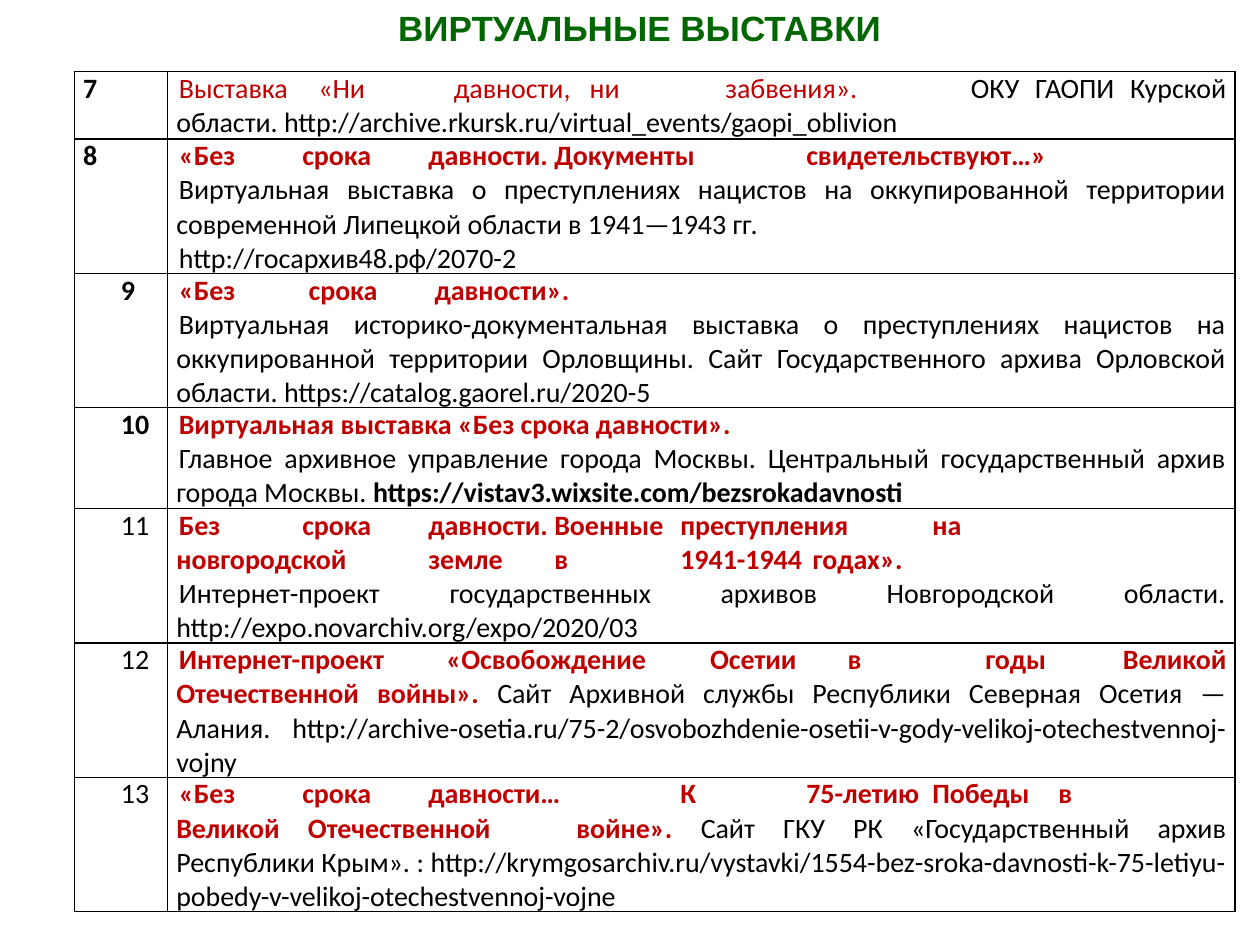
from lxml import etree
from pptx import Presentation
from pptx.dml.color import RGBColor
from pptx.enum.text import MSO_ANCHOR, PP_ALIGN
from pptx.oxml.ns import qn
from pptx.util import Pt

CENTER, JUSTIFY = PP_ALIGN.CENTER, PP_ALIGN.JUSTIFY
TOP = MSO_ANCHOR.TOP
COLORS = {"title": "006600", "heading": "C00000", "body": "000000", "border": "000000"}

TITLE = "ВИРТУАЛЬНЫЕ ВЫСТАВКИ"

# Run styles: colour and weight
HEADING = {"color": "heading", "bold": True}
LIGHT_HEADING = {"color": "heading"}
BODY = {"color": "body"}
BOLD = {"color": "body", "bold": True}

# Number, its style, its first-line indent, lines of text, paragraphs of (text, style) runs
EXHIBITIONS = [
    ("7", BOLD, 0, 2, [
        [("Выставка\t «Ни\t давности,\t ни\t забвения».", LIGHT_HEADING),
         ("\tОКУ ГАОПИ Курской области. "
          "http://archive.rkursk.ru/virtual_events/gaopi_oblivion", BODY)],
    ]),
    ("8", BOLD, 0, 4, [
        [("«Без\tсрока\tдавности.\tДокументы\tсвидетельствуют…»", HEADING)],
        [("Виртуальная выставка о преступлениях нацистов на оккупированной "
          "территории современной Липецкой области в 1941—1943 гг.", BODY)],
        [("http://госархив48.рф/2070-2", BODY)],
    ]),
    ("9", BOLD, 21.6, 4, [
        [("«Без\t срока\t давности».", HEADING)],
        [("Виртуальная историко-документальная выставка о преступлениях нацистов на "
          "оккупированной территории Орловщины. Сайт Государственного архива "
          "Орловской области. https://catalog.gaorel.ru/2020-5", BODY)],
    ]),
    ("10", BOLD, 21.6, 3, [
        [("Виртуальная выставка «Без срока давности».", HEADING)],
        [("Главное архивное управление города Москвы. Центральный государственный "
          "архив города Москвы. ", BODY),
         ("https://vistav3.wixsite.com/bezsrokadavnosti", BOLD)],
    ]),
    ("11", BODY, 21.6, 4, [
        [("Без\tсрока\tдавности.\tВоенные\tпреступления\tна\t"
          "новгородской\tземле\tв\t1941-1944\t годах».", HEADING)],
        [("Интернет-проект государственных архивов Новгородской области. "
          "http://expo.novarchiv.org/expo/2020/03", BODY)],
    ]),
    ("12", BODY, 21.6, 4, [
        [("Интернет-проект\t «Освобождение\t Осетии\t в\t годы\t Великой "
          "Отечественной войны».", HEADING),
         (" Сайт Архивной службы Республики Северная Осетия — Алания. "
          "http://archive-osetia.ru/75-2/"
          "osvobozhdenie-osetii-v-gody-velikoj-otechestvennoj-vojny", BODY)],
    ]),
    ("13", BODY, 21.6, 4, [
        [("«Без\tсрока\tдавности…\tК\t75-летию\tПобеды\tв\t"
          "Великой Отечественной\tвойне». ", HEADING),
         ("Сайт ГКУ РК «Государственный архив Республики Крым». : "
          "http://krymgosarchiv.ru/vystavki/"
          "1554-bez-sroka-davnosti-k-75-letiyu-pobedy-v-velikoj-otechestvennoj-vojne",
          BODY)],
    ]),
]

TABLE_LEFT, TABLE_TOP = 42.5, 41
COLUMN_WIDTHS = (53.3, 610)
LINE_HEIGHT = 19.2
CELL_MARGIN = 5
DESCRIPTION_INDENT = 1.44
TAB_SIZE = 72


def add_run(paragraph, text, color="body", bold=False, size=16, font="Calibri"):
    run = paragraph.add_run()
    run.text = text
    run.font.name = font
    run.font.size = Pt(size)
    run.font.bold = bold
    run.font.color.rgb = RGBColor.from_string(COLORS[color])


def write_paragraphs(text_frame, paragraphs, alignment=JUSTIFY, indent=0):
    for index, runs in enumerate(paragraphs):
        paragraph = text_frame.add_paragraph() if index else text_frame.paragraphs[0]
        paragraph.alignment = alignment
        properties = paragraph._p.get_or_add_pPr()
        properties.set("marL", "0")
        properties.set("indent", str(Pt(indent)))
        properties.set("defTabSz", str(Pt(TAB_SIZE)))
        for text, style in runs:
            add_run(paragraph, text, **style)


def add_borders(cell, width=1):
    properties = cell._tc.get_or_add_tcPr()
    for position, side in enumerate(("a:lnL", "a:lnR", "a:lnT", "a:lnB")):
        line = etree.Element(qn(side), w=str(Pt(width)))
        fill = etree.SubElement(line, qn("a:solidFill"))
        etree.SubElement(fill, qn("a:srgbClr"), val=COLORS["border"])
        properties.insert(position, line)


def fill_cell(cell, paragraphs, indent):
    cell.margin_left = cell.margin_right = Pt(CELL_MARGIN)
    cell.margin_top = cell.margin_bottom = 0
    cell.vertical_anchor = TOP
    cell.fill.background()
    add_borders(cell)
    write_paragraphs(cell.text_frame, paragraphs, indent=indent)


def add_title(slide):
    box = slide.shapes.add_textbox(Pt(153), 0, Pt(425), Pt(31.5))
    box.text_frame.word_wrap = True
    style = {"color": "title", "bold": True, "size": 20, "font": "Arial"}
    write_paragraphs(box.text_frame, [[(TITLE, style)]], alignment=CENTER)


def add_exhibition_table(slide):
    total_lines = sum(exhibition[3] for exhibition in EXHIBITIONS)
    table = slide.shapes.add_table(
        len(EXHIBITIONS), len(COLUMN_WIDTHS), Pt(TABLE_LEFT), Pt(TABLE_TOP),
        Pt(sum(COLUMN_WIDTHS)), Pt(total_lines * LINE_HEIGHT)).table
    table.first_row = table.horz_banding = False
    for column, width in zip(table.columns, COLUMN_WIDTHS):
        column.width = Pt(width)
    for row, (number, style, indent, lines, description) in zip(table.rows, EXHIBITIONS):
        row.height = Pt(lines * LINE_HEIGHT)
        fill_cell(row.cells[0], [[(number, style)]], indent)
        fill_cell(row.cells[1], description, DESCRIPTION_INDENT)


def main():
    presentation = Presentation()
    presentation.slide_width, presentation.slide_height = Pt(720), Pt(540)
    slide = presentation.slides.add_slide(presentation.slide_layouts[6])
    add_title(slide)
    add_exhibition_table(slide)
    presentation.save("out.pptx")


if __name__ == "__main__":
    main()
